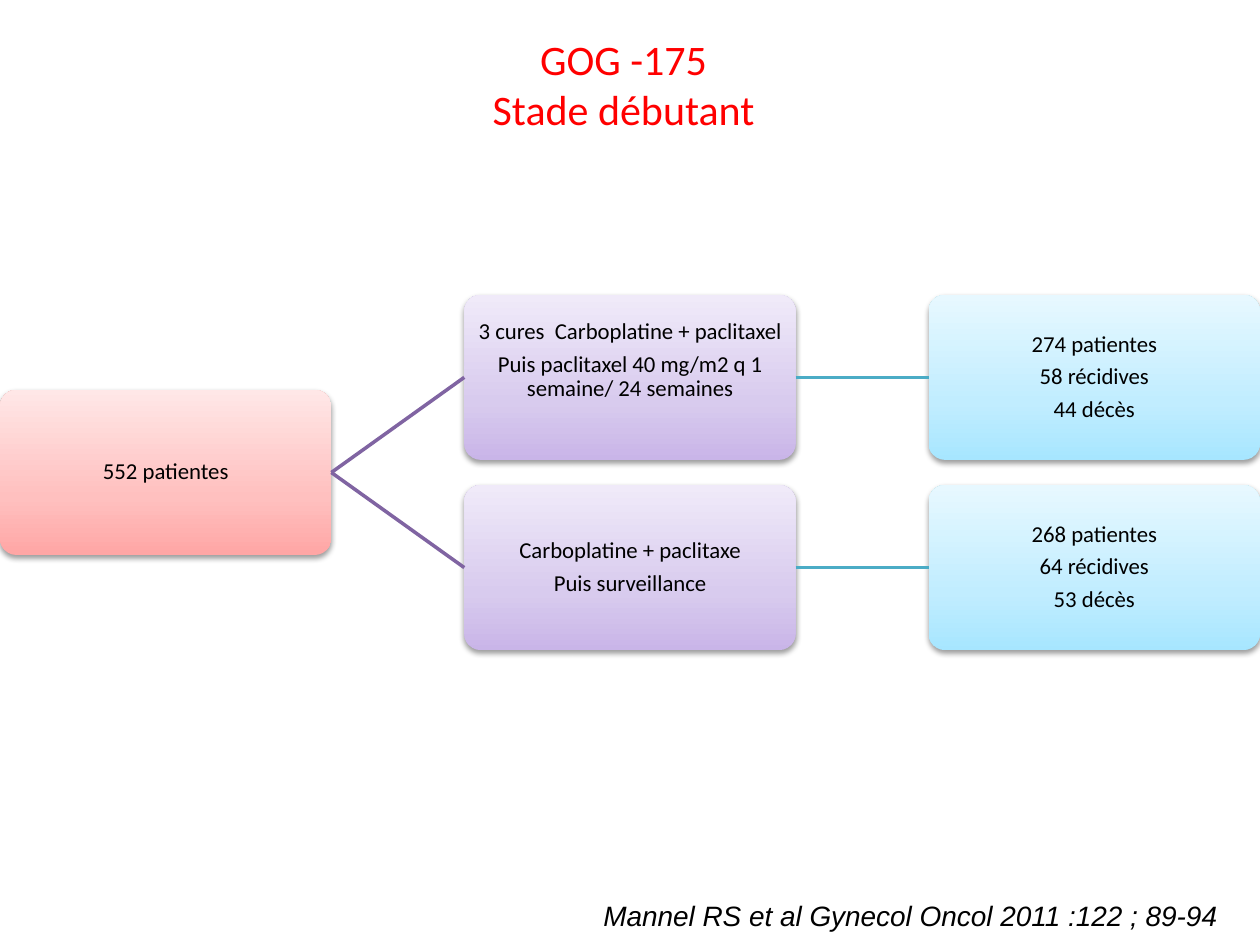
"""Build the GOG-175 trial diagram slide."""
from pptx import Presentation, oxml, util as u
from pptx.dml.color import RGBColor
from pptx.enum import shapes, text
from pptx.oxml.ns import nsdecls

BLACK = RGBColor(0x00, 0x00, 0x00)
RED = RGBColor(0xFF, 0x00, 0x00)
PURPLE = RGBColor(0x80, 0x64, 0xA2)
TEAL = RGBColor(0x4B, 0xAC, 0xC6)
PINKS = RGBColor(0xFF, 0xA6, 0xA5), RGBColor(0xFF, 0xC0, 0xBF), RGBColor(0xFF, 0xE7, 0xE7)
LILACS = RGBColor(0xC9, 0xB5, 0xE8), RGBColor(0xD8, 0xCB, 0xEE), RGBColor(0xF0, 0xEA, 0xF9)
BLUES = RGBColor(0xA7, 0xE6, 0xFF), RGBColor(0xC1, 0xED, 0xFF), RGBColor(0xE7, 0xF8, 0xFF)

BOX_W, BOX_H = 2.63, 1.31
COLUMNS = [i * (10 - BOX_W) / 2 for i in range(3)]
ROWS = 2.34, 3.85
MIDDLE = sum(ROWS) / 2

ARMS = [
    (["3 cures  Carboplatine + paclitaxel",
      "Puis paclitaxel 40 mg/m2 q 1 semaine/ 24 semaines"],
     ["274 patientes", "58 récidives", "44 décès"], 0.27),
    (["Carboplatine + paclitaxe", "Puis surveillance"],
     ["268 patientes", "64 récidives", "53 décès"], 0.01),
]


class Deck:
    def __init__(self, prs):
        self.s = prs.slides.add_slide(prs.slide_layouts[5])
        self.title_font = {"name": "Calibri", "size": u.Pt(24)}
        self.box_font = {"name": "Calibri", "size": u.Pt(13)}
        self.source_font = {"name": "Arial", "size": u.Pt(16), "italic": True}
        self.box_paragraph = {"alignment": text.PP_ALIGN.CENTER,
                              "line_spacing": 0.9, "space_after": u.Pt(4.5)}

    def fill_text(self, tf, lines, font, color, paragraph):
        for i, line in enumerate(lines):
            p = tf.add_paragraph() if i else tf.paragraphs[0]
            for key, value in paragraph.items():
                setattr(p, key, value)
            r = p.add_run()
            r.text = line
            for key, value in font.items():
                setattr(r.font, key, value)
            r.font.color.rgb = color

    def title(self, x, y, w, h, lines):
        sp = self.s.shapes.title
        sp.left, sp.top, sp.width, sp.height = map(u.Inches, (x, y, w, h))
        tf = sp.text_frame
        tf.word_wrap = False
        tf.auto_size = text.MSO_AUTO_SIZE.NONE
        self.fill_text(tf, lines, self.title_font, RED, {"alignment": text.PP_ALIGN.CENTER})

    def source(self, x, y, w, h, line):
        tf = self.s.shapes.add_textbox(*map(u.Inches, (x, y, w, h))).text_frame
        tf.word_wrap = False
        tf.auto_size = text.MSO_AUTO_SIZE.SHAPE_TO_FIT_TEXT
        self.fill_text(tf, [line], self.source_font, BLACK, {})

    def box(self, x, y, lines, colors, bottom=0.01):
        sp = self.s.shapes.add_shape(shapes.MSO_SHAPE.ROUNDED_RECTANGLE,
                                     *map(u.Inches, (x, y, BOX_W, BOX_H)))
        sp.adjustments[0] = 0.1
        stops = "".join(f'<a:gs pos="{pos}"><a:srgbClr val="{color}"/></a:gs>'
                        for pos, color in zip((0, 35000, 100000), colors))
        spPr = sp._element.spPr
        spPr.append(oxml.parse_xml(
            f'<a:gradFill {nsdecls("a")} rotWithShape="1"><a:gsLst>{stops}</a:gsLst>'
            '<a:lin ang="16200000" scaled="0"/></a:gradFill>'))
        sp.line.fill.background()
        spPr.append(oxml.parse_xml(
            f'<a:effectLst {nsdecls("a")}><a:outerShdw blurRad="{u.Pt(3.1)}" dist="{u.Pt(1.6)}" '
            f'dir="5400000" rotWithShape="0"><a:srgbClr val="{BLACK}"><a:alpha val="38000"/>'
            '</a:srgbClr></a:outerShdw></a:effectLst>'))
        tf = sp.text_frame
        frame = {"word_wrap": True, "vertical_anchor": text.MSO_ANCHOR.MIDDLE,
                 "margin_left": u.Inches(0.01), "margin_right": u.Inches(0.01),
                 "margin_top": u.Inches(0.01), "margin_bottom": u.Inches(bottom)}
        for key, value in frame.items():
            setattr(tf, key, value)
        self.fill_text(tf, lines, self.box_font, BLACK, self.box_paragraph)
        return sp

    def link(self, start, end, color):
        line = self.s.shapes.add_connector(shapes.MSO_CONNECTOR.STRAIGHT, 0, 0, 0, 0)
        line.begin_connect(start, 3)
        line.end_connect(end, 1)
        line.line.color.rgb = color
        line.line.width = u.Pt(2)
        line._element.spPr.append(oxml.parse_xml(f'<a:effectLst {nsdecls("a")}/>'))


def main():
    prs = Presentation()
    prs.slide_width, prs.slide_height = u.Inches(10), u.Inches(7.5)
    deck = Deck(prs)
    deck.title(3.8, 0.21, 2.3, 0.91, ["GOG -175", "Stade débutant"])
    deck.source(4.69, 7.08, 5.14, 0.37, "Mannel RS et al Gynecol Oncol 2011 :122 ; 89-94")
    patients = deck.box(COLUMNS[0], MIDDLE, ["552 patientes"], PINKS)
    for y, (treatment, outcome, bottom) in zip(ROWS, ARMS):
        arm = deck.box(COLUMNS[1], y, treatment, LILACS, bottom)
        result = deck.box(COLUMNS[2], y, outcome, BLUES)
        deck.link(patients, arm, PURPLE)
        deck.link(arm, result, TEAL)
    prs.save("out.pptx")


if __name__ == "__main__":
    main()
